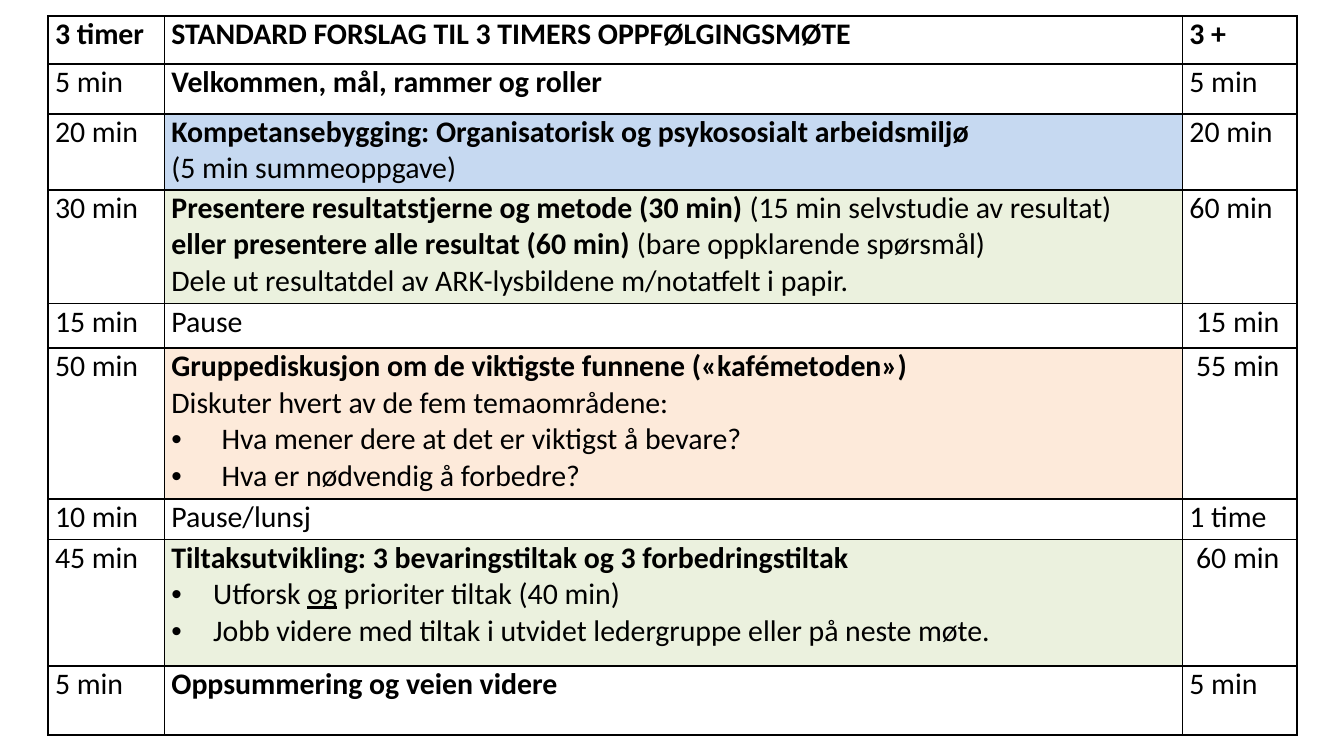
from lxml import etree
from pptx import Presentation
from pptx.dml.color import RGBColor
from pptx.oxml.ns import qn
from pptx.util import Cm, Pt

COLORS = {"text": "000000", "border": "000000", "plain": "FFFFFF",
          "blue": "C6D9F1", "green": "EBF1DE", "orange": "FDEADA"}
FONT = "Calibri"
COLS = [2.2, 19.24, 2.16]
BREAK = ("\n", "")

# Row: height, fill of the topic, bullet indent, short time, topic, long time.
# A topic is a list of paragraphs, each a list of (text, style) runs;
# style holds b for bold, u for underline, and * starts a bullet paragraph.
AGENDA = [
    (0.91, "plain", 0, [("3 timer", "b")],
     [[("STANDARD FORSLAG TIL 3 TIMERS OPPFØLGINGSMØTE", "b")]], [("3 +", "b")]),
    (0.94, "plain", 0, [("5 min", "")],
     [[("Velkommen, mål, rammer og roller", "b")]], [("5 min", "")]),
    (1.44, "blue", 0, [("20 min", "")],
     [[("Kompetansebygging: Organisatorisk og psykososialt arbeidsmiljø", "b"),
       BREAK, ("(5 min summeoppgave)", "")]], [("20 min", "")]),
    (2.15, "green", 0, [("30 min", "")],
     [[("Presentere resultatstjerne og metode (30 min) ", "b"),
       ("(15 min selvstudie av resultat)", "")],
      [("eller presentere alle resultat (60 min) ", "b"),
       ("(bare oppklarende spørsmål)", "")],
      [("Dele ut resultatdel av ARK-lysbildene m/notatfelt i papir.", "")]],
     [("60 min", "")]),
    (0.84, "plain", 0, [("15 min", "")], [[("Pause", "")]], [(" 15 min", "")]),
    (2.85, "orange", 0.95, [("50 min", "")],
     [[("Gruppediskusjon om de viktigste funnene («kafémetoden»)", "b")],
      [("Diskuter hvert av de fem temaområdene:", "")],
      [("Hva mener dere at det er viktigst å bevare?", "*")],
      [("Hva er nødvendig å forbedre?", "*")]], [(" 55 min", "")]),
    (0.77, "plain", 0, [("10 min", "")], [[("Pause/lunsj", "")]], [("1 time", "")]),
    (2.39, "green", 0.79, [("45 min", "")],
     [[("Tiltaksutvikling: 3 bevaringstiltak og 3 forbedringstiltak", "b")],
      [("Utforsk ", "*"), ("og", "u"), (" prioriter tiltak (40 min)", "")],
      [("Jobb videre med tiltak i utvidet ledergruppe eller på neste møte.", "*")]],
     [(" 60 min", "")]),
    (1.3, "plain", 0, [("5 min", "")],
     [[("Oppsummering og veien videre", "b")]], [("5 min", "")]),
]


def rgb(name):
    return RGBColor.from_string(COLORS[name])


def add_text(p, text, size=16, bold=False, underline=False, color="text"):
    r = p.add_run()
    r.text = text
    r.font.name, r.font.size = FONT, Pt(size)
    r.font.bold, r.font.underline = bold, underline
    r.font.color.rgb = rgb(color)


def add_bullet(p, indent):
    pPr = p._p.get_or_add_pPr()
    pPr.set("marL", str(Cm(indent)))
    pPr.set("indent", str(-Cm(indent)))
    etree.SubElement(pPr, qn("a:buFont"), typeface="Arial")
    etree.SubElement(pPr, qn("a:buChar"), char="•")


def format_cell(cell, fill):
    cell.margin_left = cell.margin_right = Cm(0.13)
    cell.margin_top = cell.margin_bottom = 0
    tcPr = cell._tc.get_or_add_tcPr()
    for side in ("lnL", "lnR", "lnT", "lnB"):
        ln = etree.SubElement(tcPr, qn("a:" + side), w=str(Pt(1)))
        solid = etree.SubElement(ln, qn("a:solidFill"))
        etree.SubElement(solid, qn("a:srgbClr"), val=COLORS["border"])
    cell.fill.solid()
    cell.fill.fore_color.rgb = rgb(fill)


def fill_cell(cell, paragraphs, fill="plain", indent=0):
    format_cell(cell, fill)
    tf = cell.text_frame
    for i, runs in enumerate(paragraphs):
        p = tf.paragraphs[0] if i == 0 else tf.add_paragraph()
        if "*" in runs[0][1]:
            add_bullet(p, indent)
        for run in runs:
            if run == BREAK:
                p.add_line_break()
            else:
                text, style = run
                add_text(p, text, bold="b" in style, underline="u" in style)


def add_agenda(s, left, top):
    heights = [row[0] for row in AGENDA]
    table = s.shapes.add_table(len(AGENDA), len(COLS), Cm(left), Cm(top),
                               Cm(sum(COLS)), Cm(sum(heights))).table
    table.first_row = table.horz_banding = False
    for column, width in zip(table.columns, COLS):
        column.width = Cm(width)
    for i, (height, fill, indent, short, topic, extended) in enumerate(AGENDA):
        table.rows[i].height = Cm(height)
        fill_cell(table.cell(i, 0), [short])
        fill_cell(table.cell(i, 1), topic, fill, indent)
        fill_cell(table.cell(i, 2), [extended])


def main():
    prs = Presentation()
    prs.slide_width, prs.slide_height = Cm(25.4), Cm(14.29)
    s = prs.slides.add_slide(prs.slide_layouts[6])
    # Meeting agenda
    add_agenda(s, left=0.91, top=0.3)
    prs.save("out.pptx")


if __name__ == "__main__":
    main()
